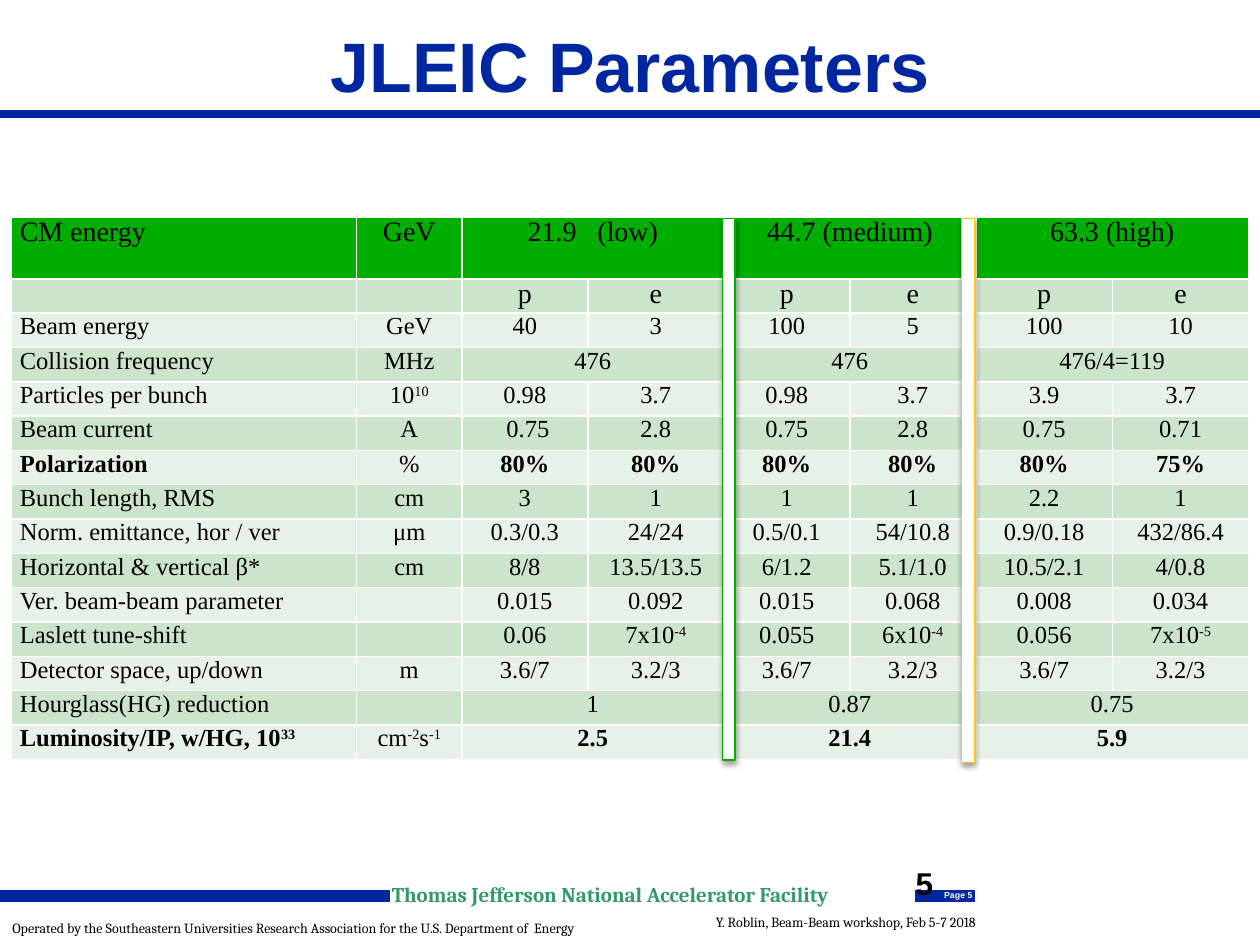
import dataclasses

import lxml.etree
import pptx
import pptx.dml.color
import pptx.enum.shapes
import pptx.enum.text
import pptx.oxml.ns
import pptx.util

Cm = pptx.util.Cm
Pt = pptx.util.Pt
qn = pptx.oxml.ns.qn
ALIGN = pptx.enum.text.PP_ALIGN
ANCHOR = pptx.enum.text.MSO_ANCHOR
AUTO_SIZE = pptx.enum.text.MSO_AUTO_SIZE


@dataclasses.dataclass(frozen=True)
class Theme:
    blue: str = "00279F"
    lab_green: str = "339966"
    header_green: str = "00AE00"
    band_dark: str = "CCE3CC"
    band_light: str = "E7F2E7"
    gold: str = "FEC60B"
    black: str = "000000"
    white: str = "FFFFFF"
    heading_font: str = "Arial"
    footer_font: str = "Cambria"
    table_font: str = "Times New Roman"
    title_size: float = 40
    number_size: float = 18
    header_size: float = 16
    body_size: float = 14
    lab_size: float = 12
    footer_size: float = 8
    page_size: float = 5


# Column widths and table heights in cm
COLUMNS = [6.97, 2.12, 2.54, 2.74, 2.54, 2.54, 2.76, 2.74]
TABLE_HEIGHT, HEADER_HEIGHT = 10.95, 1.25

# Label, unit, then p and e for each energy; one value per energy spans p and e.
# Text between carets is superscript.
PARAMETERS = [
    ("CM energy", "GeV", "21.9   (low)", "44.7 (medium)", "63.3 (high)"),
    ("", "", "p", "e", "p", "e", "p", "e"),
    ("Beam energy", "GeV", "40", "3", "100", "5", "100", "10"),
    ("Collision frequency", "MHz", "476", "476", "476/4=119"),
    ("Particles per bunch", "10^10", "0.98", "3.7", "0.98", "3.7", "3.9", "3.7"),
    ("Beam current", "A", " 0.75", "2.8", "0.75", "2.8", "0.75", "0.71"),
    ("Polarization", "%", "80%", "80%", "80%", "80%", "80%", "75%"),
    ("Bunch length, RMS", "cm", "3", "1", "1", "1", "2.2", "1"),
    ("Norm. emittance, hor / ver", "μm", "0.3/0.3", "24/24", "0.5/0.1", "54/10.8",
     "0.9/0.18", "432/86.4"),
    ("Horizontal & vertical β*", "cm", "8/8", "13.5/13.5", "6/1.2", "5.1/1.0",
     "10.5/2.1", "4/0.8"),
    ("Ver. beam-beam parameter", "", "0.015", "0.092", "0.015", "0.068", "0.008", "0.034"),
    ("Laslett tune-shift", "", "0.06", "7x10^-4", "0.055", "6x10^-4", "0.056", "7x10^-5"),
    ("Detector space, up/down", "m", "3.6/7", "3.2/3", "3.6/7", "3.2/3", "3.6/7", "3.2/3"),
    ("Hourglass(HG) reduction", "", "1", "0.87", "0.75"),
    ("Luminosity/IP, w/HG, 10^33", "cm^-2^s^-1", "2.5", "21.4", "5.9"),
]
BOLD_ROWS = ("Polarization", "Luminosity/IP, w/HG, 10^33")


def rgb(code):
    return pptx.dml.color.RGBColor.from_string(code)


def write(frame, text, *, font, size, color, bold=False, align=ALIGN.LEFT, spacing=None):
    """Fill the first paragraph; parts between carets become superscript."""
    paragraph = frame.paragraphs[0]
    paragraph.alignment = align
    if spacing:
        paragraph.line_spacing = spacing
    if not text:
        lxml.etree.SubElement(paragraph._p, qn("a:endParaRPr"), sz=str(size * 100))
    for index, part in enumerate(text.split("^") if text else []):
        run = paragraph.add_run()
        run.text = part
        run.font.name, run.font.size, run.font.bold = font, Pt(size), bold
        run.font.color.rgb = rgb(color)
        if index % 2:
            run._r.get_or_add_rPr().set("baseline", "30000")


class ParameterSlide:
    def __init__(self, deck, theme):
        self.theme = theme
        self.slide = deck.slides.add_slide(deck.slide_layouts[5])
        self.shapes = self.slide.shapes

    def title(self, text):
        title = self.shapes.title
        title.left, title.top, title.width, title.height = Cm(0), Cm(0.48), Cm(25.4), Cm(1.9)
        title.text_frame.auto_size = AUTO_SIZE.NONE
        title.text_frame.vertical_anchor = ANCHOR.MIDDLE
        write(title.text_frame, text, font=self.theme.heading_font, size=self.theme.title_size,
              color=self.theme.blue, bold=True, align=ALIGN.CENTER, spacing=0.85)

    def rule(self, start, end, y, weight):
        rule = self.shapes.add_connector(pptx.enum.shapes.MSO_CONNECTOR.STRAIGHT,
                                         Cm(start), Cm(y), Cm(end), Cm(y))
        rule.line.color.rgb = rgb(self.theme.blue)
        rule.line.width = Pt(weight)
        lxml.etree.SubElement(rule._element.spPr, qn("a:effectLst"))

    def label(self, text, left, top, width, height, *, wrap=True, inset=True, **style):
        frame = self.shapes.add_textbox(Cm(left), Cm(top), Cm(width), Cm(height)).text_frame
        frame.word_wrap = wrap
        if not inset:
            frame.margin_left = frame.margin_right = frame.margin_top = frame.margin_bottom = 0
        write(frame, text, **style)

    def divider(self, left, top, width, height, outline):
        divider = self.shapes.add_shape(pptx.enum.shapes.MSO_SHAPE.RECTANGLE,
                                        Cm(left), Cm(top), Cm(width), Cm(height))
        divider.fill.solid()
        divider.fill.fore_color.rgb = rgb(self.theme.white)
        divider.line.color.rgb = rgb(outline)
        divider.line.width = Pt(0.75)
        # Soft shadow straight below
        divider.shadow.inherit = False
        effects = divider._element.spPr.find(qn("a:effectLst"))
        shadow = lxml.etree.SubElement(effects, qn("a:outerShdw"), blurRad=str(Pt(3.1)),
                                       dist=str(Pt(1.8)), dir="5400000", rotWithShape="0")
        tint = lxml.etree.SubElement(shadow, qn("a:srgbClr"), val=self.theme.black)
        lxml.etree.SubElement(tint, qn("a:alpha"), val="35000")

    def border(self, cell, weight):
        for side in "LRTB":
            line = lxml.etree.SubElement(cell._tc.get_or_add_tcPr(), qn(f"a:ln{side}"),
                                         w=str(Pt(weight)))
            fill = lxml.etree.SubElement(line, qn("a:solidFill"))
            lxml.etree.SubElement(fill, qn("a:srgbClr"), val=self.theme.white)

    def band(self, row):
        if row == 0:
            return self.theme.header_green
        return self.theme.band_dark if row % 2 else self.theme.band_light

    def parameter_table(self, left, top):
        body_rows = len(PARAMETERS) - 1
        heights = [HEADER_HEIGHT] + [(TABLE_HEIGHT - HEADER_HEIGHT) / body_rows] * body_rows
        table = self.shapes.add_table(len(heights), len(COLUMNS), Cm(left), Cm(top),
                                      Cm(sum(COLUMNS)), Cm(TABLE_HEIGHT)).table
        for column, width in zip(table.columns, COLUMNS):
            column.width = Cm(width)
        for row, (height, values) in enumerate(zip(heights, PARAMETERS)):
            table.rows[row].height = Cm(height)
            spanned = len(values) < len(COLUMNS)
            for index, value in enumerate(values):
                column = 2 * index - 2 if spanned and index > 1 else index
                cell = table.cell(row, column)
                if spanned and index > 1:
                    cell.merge(table.cell(row, column + 1))
                self.table_cell(cell, value, row, column, values[0] in BOLD_ROWS)

    def table_cell(self, cell, value, row, column, bold_row):
        self.border(cell, 1)
        cell.fill.solid()
        cell.fill.fore_color.rgb = rgb(self.band(row))
        cell.margin_left = cell.margin_right = Cm(0.18)
        cell.margin_top = cell.margin_bottom = 0
        write(cell.text_frame, value, font=self.theme.table_font, color=self.theme.black,
              size=self.theme.header_size if row < 2 and value else self.theme.body_size,
              bold=bold_row and column != 1,
              align=ALIGN.CENTER if column else ALIGN.LEFT)


def main():
    deck = pptx.Presentation()
    deck.slide_width, deck.slide_height = Cm(25.4), Cm(19.05)
    theme = Theme()
    page = ParameterSlide(deck, theme)

    # Heading and footer rules
    page.title("JLEIC Parameters")
    page.rule(0, 25.4, 2.29, 4.5)
    page.rule(0, 7.86, 18.06, 7.25)
    page.rule(18.44, 19.66, 18.06, 7.25)

    # Footer
    small = dict(font=theme.footer_font, size=theme.footer_size, color=theme.black, spacing=0.6)
    page.label("Operated by the Southeastern Universities Research Association for the "
               "U.S. Department of  Energy", 0, 18.54, 11.86, 0.46, **small)
    page.label("Y. Roblin, Beam-Beam workshop, Feb 5-7 2018", 14.18, 18.42, 6.35, 0.46, **small)
    page.label("Thomas Jefferson National Accelerator Facility", 7.9, 17.87, 10.6, 0.48,
               inset=False, font=theme.footer_font, size=theme.lab_size,
               color=theme.lab_green, bold=True, spacing=0.8)
    # Ends inside the short rule, so that the white digit stays on blue
    page.label("Page 5", 19.02, 17.93, 0.6, 0.25, wrap=False, inset=False,
               font=theme.heading_font, size=theme.page_size, color=theme.white,
               bold=True, align=ALIGN.CENTER)

    # Parameter table, with dividers between the energies
    page.parameter_table(0.22, 4.37)
    page.divider(14.56, 4.4, 0.26, 10.92, theme.header_green)
    page.divider(19.38, 4.4, 0.26, 10.97, theme.gold)

    # Slide number
    page.label("5", 18.21, 17.3, 5.92, 0.76, font=theme.heading_font,
               size=theme.number_size, color=theme.black, bold=True)
    deck.save("out.pptx")


if __name__ == "__main__":
    main()
